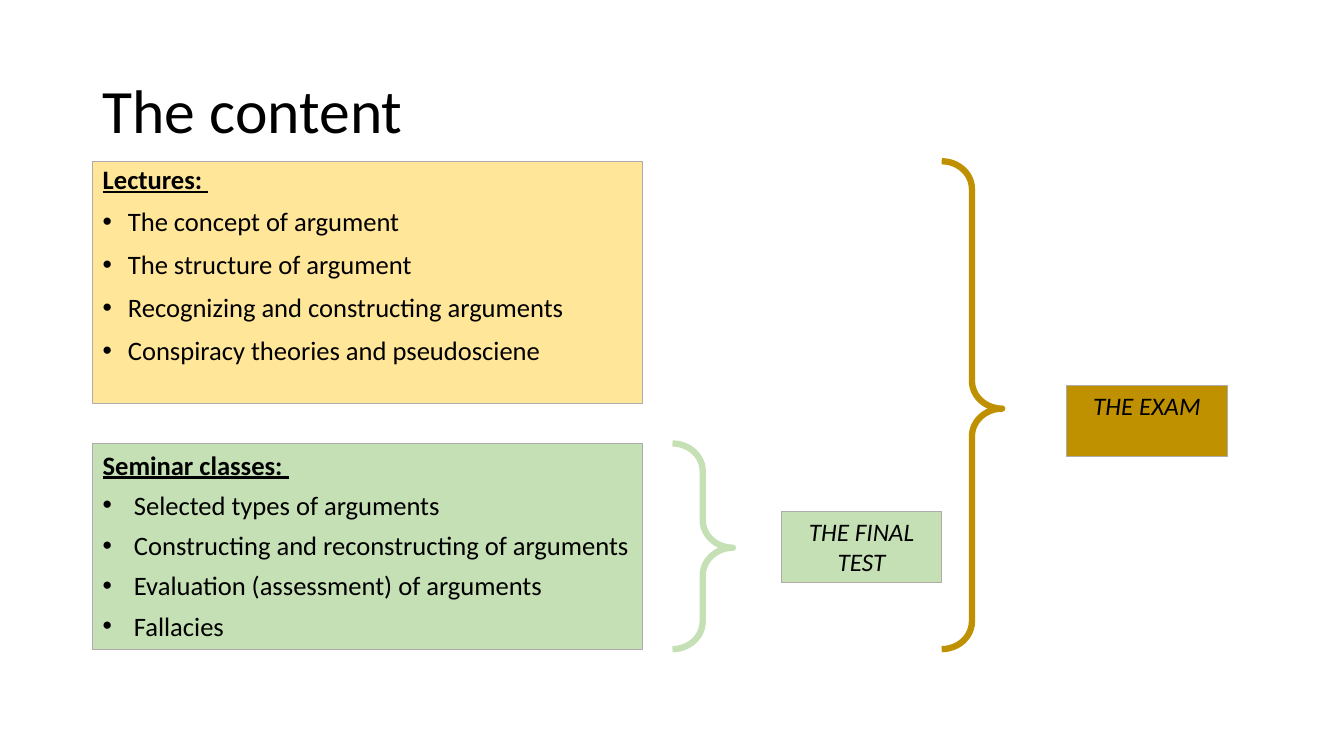
import pptx
import pptx.dml.color
import pptx.enum.shapes
import pptx.enum.text
import pptx.oxml
import pptx.oxml.ns
import pptx.util

Inches = pptx.util.Inches
Pt = pptx.util.Pt
Shapes = pptx.enum.shapes.MSO_SHAPE
Align = pptx.enum.text.PP_ALIGN
Anchor = pptx.enum.text.MSO_ANCHOR

COLORS = {
    "text": "000000",
    "border": "AFABAB",
    "lectures": "FFE699",
    "seminar": "C5E0B4",
    "exam": "BF9000",
}
LECTURES = [
    "The concept of argument",
    "The structure of argument",
    "Recognizing and constructing arguments",
    "Conspiracy theories and pseudosciene",
]
SEMINARS = [
    "Selected types of arguments",
    "Constructing and reconstructing of arguments",
    "Evaluation (assessment) of arguments",
    "Fallacies",
]
LEFT = 0.92
LECTURES_TOP = 1.6
SEMINAR_TOP = 4.4
SEMINAR_HEIGHT = 2.04


def rgb(name):
    """Return the named colour."""
    return pptx.dml.color.RGBColor.from_string(COLORS[name])


def set_attributes(target, values):
    """Set each attribute of the target from a dict."""
    for name, value in values.items():
        setattr(target, name, value)


def add_text(paragraph, text, font_values):
    """Add a black Calibri run to the paragraph."""
    run = paragraph.add_run()
    run.text = text
    set_attributes(run.font, {"name": "Calibri", **font_values})
    run.font.color.rgb = rgb("text")


def add_bullet(paragraph, indent):
    """Give the paragraph a round bullet with a hanging indent."""
    properties = paragraph._p.get_or_add_pPr()
    properties.set("marL", str(Inches(indent)))
    properties.set("indent", str(-Inches(indent)))
    for tag, attribute, value in (("buFont", "typeface", "Arial"), ("buChar", "char", "•")):
        element = pptx.oxml.parse_xml(
            f'<a:{tag} {pptx.oxml.ns.nsdecls("a")} {attribute}="{value}"/>'
        )
        properties.append(element)


def add_title(slide, box, text):
    """Place the slide title, centred vertically in its box."""
    shape = slide.shapes.add_textbox(*map(Inches, box))
    set_attributes(shape.text_frame, {"word_wrap": True, "vertical_anchor": Anchor.MIDDLE})
    paragraph = shape.text_frame.paragraphs[0]
    paragraph.line_spacing = 0.9
    add_text(paragraph, text, {"size": Pt(44)})


def add_panel(slide, box, fill, anchor=Anchor.TOP):
    """Place a filled rectangle with a thin grey border and return it."""
    shape = slide.shapes.add_shape(Shapes.RECTANGLE, *map(Inches, box))
    shape.shadow.inherit = False
    shape.fill.solid()
    shape.fill.fore_color.rgb = rgb(fill)
    shape.line.color.rgb = rgb("border")
    shape.line.width = Pt(0.75)
    set_attributes(shape.text_frame, {"word_wrap": True, "vertical_anchor": anchor})
    return shape


def add_topics(slide, box, fill, heading, topics, indent, spacing):
    """Place a panel with an underlined heading and bulleted topics."""
    frame = add_panel(slide, box, fill).text_frame
    for index, text in enumerate([heading, *topics]):
        is_heading = index == 0
        paragraph = frame.paragraphs[0] if is_heading else frame.add_paragraph()
        set_attributes(paragraph, {"alignment": Align.LEFT, **spacing})
        if not is_heading:
            add_bullet(paragraph, indent)
        add_text(paragraph, text, {"size": Pt(19), "bold": is_heading, "underline": is_heading})


def add_outcome(slide, box, fill, text):
    """Place a small panel naming an assessment."""
    paragraph = add_panel(slide, box, fill).text_frame.paragraphs[0]
    paragraph.alignment = Align.CENTER
    add_text(paragraph, text, {"size": Pt(18), "italic": True})


def add_brace(slide, box, color):
    """Place a thick right brace that spans the height of its box."""
    shape = slide.shapes.add_shape(Shapes.RIGHT_BRACE, *map(Inches, box))
    shape.shadow.inherit = False
    shape.fill.background()
    shape.line.color.rgb = rgb(color)
    shape.line.width = Pt(4.5)
    for index, value in enumerate((0.458, 0.507)):
        shape.adjustments[index] = value


def build_content_slide(slide):
    """Lay out the course content and its assessments."""
    bottom = SEMINAR_TOP + SEMINAR_HEIGHT
    add_title(slide, (LEFT, 0.4, 11.5, 1.45), "The content")
    add_topics(slide, (LEFT, LECTURES_TOP, 5.45, 2.4), "lectures", "Lectures: ", LECTURES,
               0.25, {"line_spacing": 0.9, "space_before": Pt(10)})
    add_topics(slide, (LEFT, SEMINAR_TOP, 5.45, SEMINAR_HEIGHT), "seminar",
               "Seminar classes: ", SEMINARS, 0.31, {"space_after": Pt(6)})
    add_brace(slide, (6.67, SEMINAR_TOP, 0.6, SEMINAR_HEIGHT), "seminar")
    add_outcome(slide, (7.75, 5.07, 1.59, 0.71), "seminar", "THE FINAL TEST")
    add_brace(slide, (9.34, LECTURES_TOP, 0.6, bottom - LECTURES_TOP), "exam")
    add_outcome(slide, (10.58, 3.82, 1.59, 0.71), "exam", "THE EXAM")


def main():
    """Build and save the presentation."""
    presentation = pptx.Presentation()
    set_attributes(presentation, {"slide_width": Inches(13.33), "slide_height": Inches(7.5)})
    build_content_slide(presentation.slides.add_slide(presentation.slide_layouts[6]))
    presentation.save("out.pptx")


if __name__ == "__main__":
    main()
